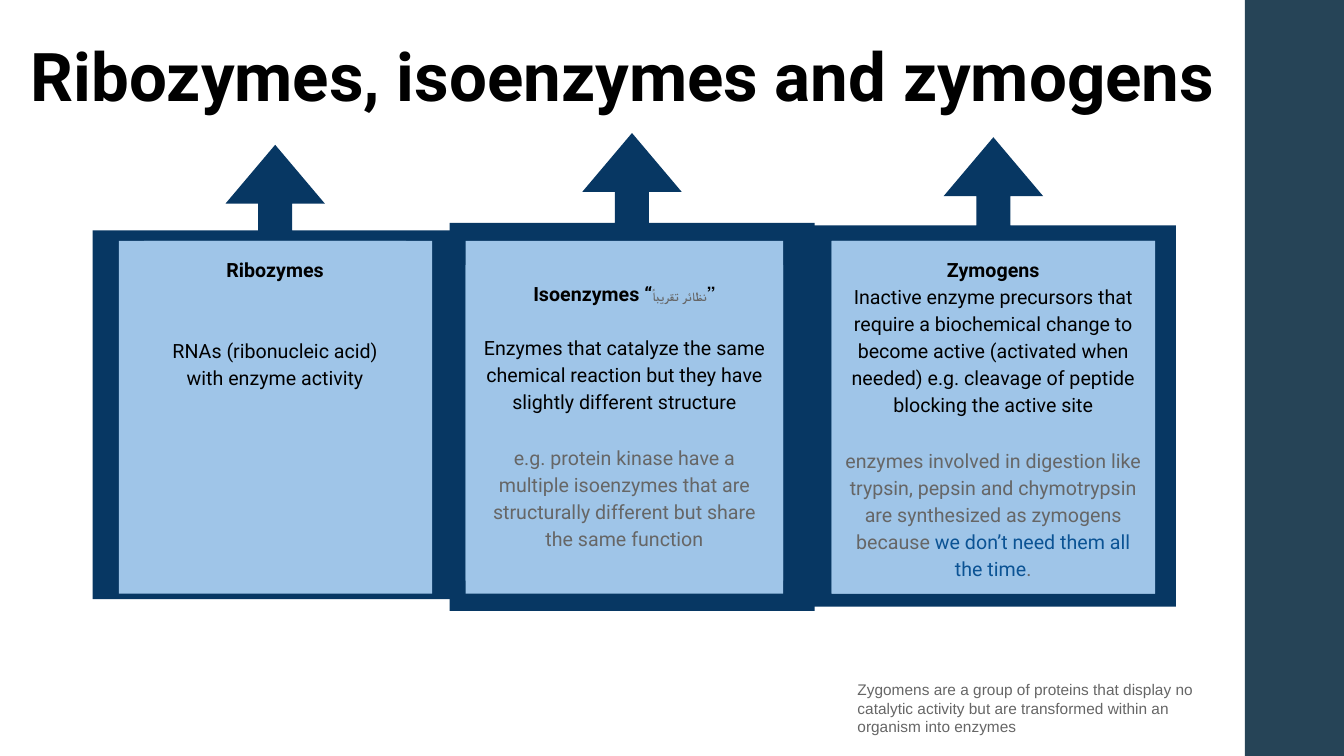
from dataclasses import dataclass

from pptx import Presentation
from pptx.dml.color import RGBColor
from pptx.enum.shapes import MSO_SHAPE as Shape
from pptx.enum.text import MSO_ANCHOR as Anchor, PP_ALIGN as Align
from pptx.util import Inches, Pt

COLUMNS, ROWS = 160, 90


@dataclass(frozen=True)
class Theme:
    sidebar: str = "264457"
    frame: str = "073763"
    panel: str = "9FC5E8"
    ink: str = "000000"
    muted: str = "666666"
    accent: str = "0B5394"
    font: str = "Roboto"
    note_font: str = "Arial"
    title_size: float = 48
    body_size: float = 14
    note_size: float = 11
    arabic_size: float = 9
    line_spacing: float = 1.15
    blank_line: float = 19.3
    paragraph_gap: float = 21


def span(text, **style):
    """Pair a piece of text with its format: size, color, bold, font."""
    return text, style


def para(*spans, **layout):
    """Pair spans with their paragraph layout: align, spacing, after."""
    return spans, layout


class SlideBuilder:
    def __init__(self, deck, theme):
        self.theme = theme
        self.page = deck.slides.add_slide(deck.slide_layouts[6])
        self.column = deck.slide_width / COLUMNS
        self.row = deck.slide_height / ROWS

    def place(self, left, top, width, height):
        """Turn grid columns and rows into slide lengths."""
        return (round(left * self.column), round(top * self.row),
                round(width * self.column), round(height * self.row))

    def shape(self, kind, area, color, adjustments=(), parent=None):
        shapes = (parent or self.page).shapes
        box = shapes.add_shape(kind, *self.place(*area))
        box.shadow.inherit = False
        box.fill.solid()
        box.fill.fore_color.rgb = RGBColor.from_string(color)
        box.line.fill.background()
        for index, value in enumerate(adjustments):
            box.adjustments[index] = value
        return box

    def text_box(self, area, paragraphs):
        box = self.page.shapes.add_textbox(*self.place(*area))
        self.set_text(box, paragraphs, inset=0.1)

    def set_text(self, box, paragraphs, inset):
        frame = box.text_frame
        frame.word_wrap = True
        frame.vertical_anchor = Anchor.TOP
        frame.margin_left = frame.margin_right = Inches(inset)
        frame.margin_top = frame.margin_bottom = Inches(inset)
        for index, (spans, layout) in enumerate(paragraphs):
            paragraph = frame.add_paragraph() if index else frame.paragraphs[0]
            paragraph.alignment = layout.get("align", Align.CENTER)
            paragraph.line_spacing = layout.get("spacing", self.theme.line_spacing)
            paragraph.space_after = Pt(layout.get("after", 0))
            for text, style in spans:
                self.add_run(paragraph, text, **style)

    def add_run(self, paragraph, text, size=None, color=None, bold=False, font=None):
        run = paragraph.add_run()
        run.text = text
        run.font.name = font or self.theme.font
        run.font.size = Pt(size or self.theme.body_size)
        run.font.bold = bold
        run.font.color.rgb = RGBColor.from_string(color or self.theme.ink)

    def card(self, center, frame_height, panel, text_area, paragraphs):
        """Draw an upward callout frame, its light panel and the text on it."""
        group = self.page.shapes.add_group_shape()
        frame_width, middle = 43.44, 44.28
        frame_area = (center - frame_height / 2, middle - frame_width / 2,
                      frame_height, frame_width)
        frame = self.shape(Shape.RIGHT_ARROW_CALLOUT, frame_area, self.theme.frame,
                           (0.093, 0.136, 0.161, 0.812), group)
        frame.rotation = 270
        self.shape(Shape.SNIP_1_RECTANGLE, panel, self.theme.panel, (0,), group)
        box = self.shape(Shape.RECTANGLE, text_area, self.theme.panel, parent=group)
        self.set_text(box, paragraphs, inset=0.13)


def main():
    deck = Presentation()
    deck.slide_width, deck.slide_height = Inches(13.33), Inches(7.5)
    theme = Theme()
    slide = SlideBuilder(deck, theme)
    gap, blank = theme.paragraph_gap, theme.blank_line

    slide.shape(Shape.RECTANGLE, (148.2, 0, 11.8, ROWS), theme.sidebar)

    slide.card(32.76, 54.1, (14.16, 28.68, 37.3, 42), (17.16, 28.68, 31.2, 37.56), [
        para(span("Ribozymes", bold=True), after=2 * blank),
        para(span("RNAs (ribonucleic acid) with enzyme activity"), after=gap),
    ])
    slide.card(75.24, 56.9, (55.44, 28.68, 37.8, 42), (55.44, 31.56, 37.8, 37.56), [
        para(span("Isoenzymes “", bold=True),
             span("نظائر تقريباً", bold=True, size=theme.arabic_size, color=theme.muted),
             span("”", bold=True), after=blank),
        para(span("Enzymes that catalyze the same chemical reaction but they have "
                  "slightly different structure"), after=gap),
        para(span("e.g. protein kinase have a multiple isoenzymes that are structurally "
                  "different but share the same function", color=theme.muted), after=gap),
    ])
    slide.card(118.26, 55.9, (99, 28.68, 38.5, 42), (99, 28.68, 38.5, 42), [
        para(span("Zymogens", bold=True)),
        para(span("Inactive enzyme precursors that require a biochemical change to become "
                  "active (activated when needed) e.g. cleavage of peptide blocking the "
                  "active site"), after=gap),
        para(span("enzymes involved in digestion like trypsin, pepsin and chymotrypsin are "
                  "synthesized as zymogens because", color=theme.muted),
             span(" we don’t need them all the time", color=theme.accent),
             span(".", color=theme.muted), after=gap),
    ])

    slide.text_box((2.5, 2.9, 145.4, 9.6), [
        para(span("Ribozymes, isoenzymes and zymogens", size=theme.title_size, bold=True),
             align=Align.LEFT, spacing=1.0),
    ])
    slide.text_box((100.9, 79.8, 47, 14), [
        para(span("Zygomens are a group of proteins that display no catalytic activity but "
                  "are transformed within an organism into enzymes", size=theme.note_size,
                  color=theme.muted, font=theme.note_font), align=Align.LEFT, spacing=1.0),
    ])

    deck.save("out.pptx")


if __name__ == "__main__":
    main()
